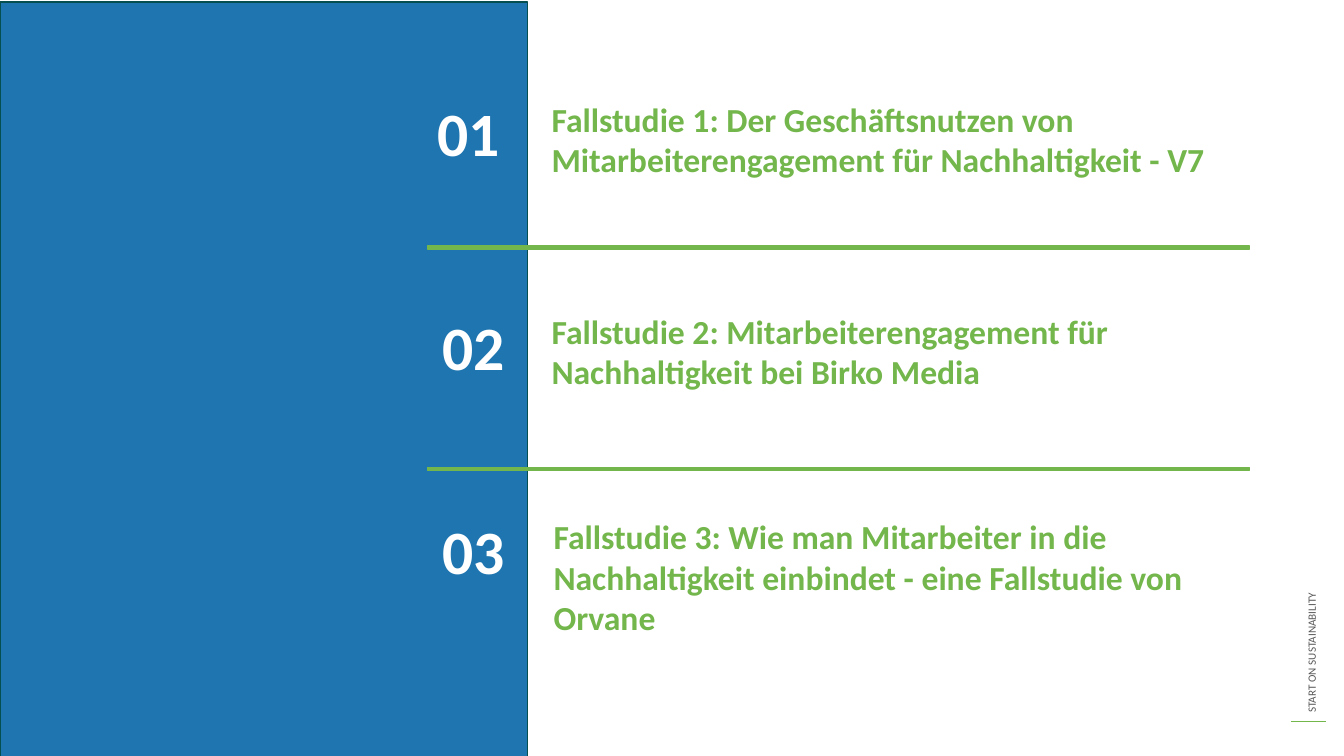
from dataclasses import dataclass

from lxml import etree
from pptx import Presentation
from pptx import util as u
from pptx.dml.color import RGBColor
from pptx.enum import shapes, text
from pptx.oxml import ns

PX = 9144  # EMU per px, 100 px to the inch
SLIDE_WIDTH, SLIDE_HEIGHT = 1333, 750
COMPARISON_LAYOUT = 4


@dataclass(frozen=True)
class Theme:
    font: str = "Calibri"
    blue: str = "1E75B0"
    green: str = "73B64B"
    edge: str = "054F50"
    white: str = "FFFFFF"
    grey: str = "595959"
    heading_size: int = 24
    number_size: int = 44
    footer_size: int = 8
    line_width: int = 1


def px(*lengths):
    return [u.Emu(length * PX) for length in lengths]


def write(frame, wording, *, font, size, color, bold=False, spacing=1.0):
    """Fill a text frame with one left-aligned, top-anchored paragraph."""
    frame.word_wrap = True
    frame.auto_size = text.MSO_AUTO_SIZE.NONE
    frame.vertical_anchor = text.MSO_ANCHOR.TOP
    paragraph = frame.paragraphs[0]
    paragraph.alignment = text.PP_ALIGN.LEFT
    paragraph.line_spacing = spacing
    paragraph.space_before = u.Pt(0)
    run = paragraph.add_run()
    run.text = wording
    run.font.name = font
    run.font.size = u.Pt(size)
    run.font.bold = bold
    run.font.color.rgb = RGBColor.from_string(color)
    return paragraph


class AgendaSlide:
    def __init__(self, deck, theme):
        self.theme = theme
        self.slide = deck.slides.add_slide(deck.slide_layouts[COMPARISON_LAYOUT])
        self.free_bodies = [holder for holder in self.slide.placeholders
                            if holder.placeholder_format.idx in (1, 2, 3)]

    def bar(self, left, top, width, height, fill, edge):
        bar = self.slide.shapes.add_shape(
            shapes.MSO_SHAPE.RECTANGLE, *px(left, top, width, height))
        bar.shadow.inherit = False
        bar.fill.solid()
        bar.fill.fore_color.rgb = RGBColor.from_string(fill)
        bar.line.color.rgb = RGBColor.from_string(edge)
        bar.line.width = u.Pt(self.theme.line_width)

    def rule(self, left, right, y):
        rule = self.slide.shapes.add_connector(
            shapes.MSO_CONNECTOR.STRAIGHT, *px(left, y, right, y))
        rule.line.color.rgb = RGBColor.from_string(self.theme.green)
        rule.line.width = u.Pt(self.theme.line_width)
        etree.SubElement(rule.element.spPr, ns.qn("a:effectLst"))

    def label(self, wording, left, top, width, height, rotation=0, **style):
        label = self.slide.shapes.add_textbox(*px(left, top, width, height))
        label.rotation = rotation
        write(label.text_frame, wording, font=self.theme.font, **style)

    def heading(self, wording, left, top, width, height):
        """Use the next free body placeholder, without its bullet."""
        heading = self.free_bodies.pop(0)
        heading.left, heading.top, heading.width, heading.height = px(
            left, top, width, height)
        paragraph = write(heading.text_frame, wording, font=self.theme.font,
                          size=self.theme.heading_size,
                          color=self.theme.green, bold=True)
        properties = paragraph._p.get_or_add_pPr()
        properties.set("marL", "0")
        properties.set("indent", "0")
        etree.SubElement(properties, ns.qn("a:buNone"))

    def remove_empty_placeholders(self):
        for holder in list(self.slide.placeholders):
            if not holder.text_frame.text:
                holder.element.getparent().remove(holder.element)


def main():
    deck = Presentation()
    deck.slide_width, deck.slide_height = px(SLIDE_WIDTH, SLIDE_HEIGHT)
    theme = Theme()
    agenda = AgendaSlide(deck, theme)

    agenda.label("START ON SUSTAINABILITY", 1078, 482, 446, 24, rotation=270,
                 size=theme.footer_size, color=theme.grey)
    agenda.rule(1280, 1315, 716)
    agenda.bar(0, 2, 523, 750, theme.blue, theme.edge)

    # wording, heading left, heading top, number left, number top
    case_studies = [
        ("Fallstudie 1: Der Geschäftsnutzen von Mitarbeiterengagement "
         "für Nachhaltigkeit - V7", 537, 93, 424, 67),
        ("Fallstudie 2: Mitarbeiterengagement für Nachhaltigkeit "
         "bei Birko Media", 537, 303, 429, 280),
        ("Fallstudie 3: Wie man Mitarbeiter in die Nachhaltigkeit einbindet "
         "- eine Fallstudie von Orvane", 539, 507, 429, 482),
    ]
    for number, (wording, left, top, number_left, number_top) in enumerate(
            case_studies, start=1):
        agenda.heading(wording, left, top, 718, 37)
        agenda.label(f"{number:02}", number_left, number_top, 135, 105,
                     size=theme.number_size, color=theme.white, bold=True,
                     spacing=1.3)
    for divider_top in (244, 464):
        agenda.bar(424, divider_top, 815, 3, theme.green, theme.green)

    agenda.remove_empty_placeholders()
    deck.save("out.pptx")


if __name__ == "__main__":
    main()
